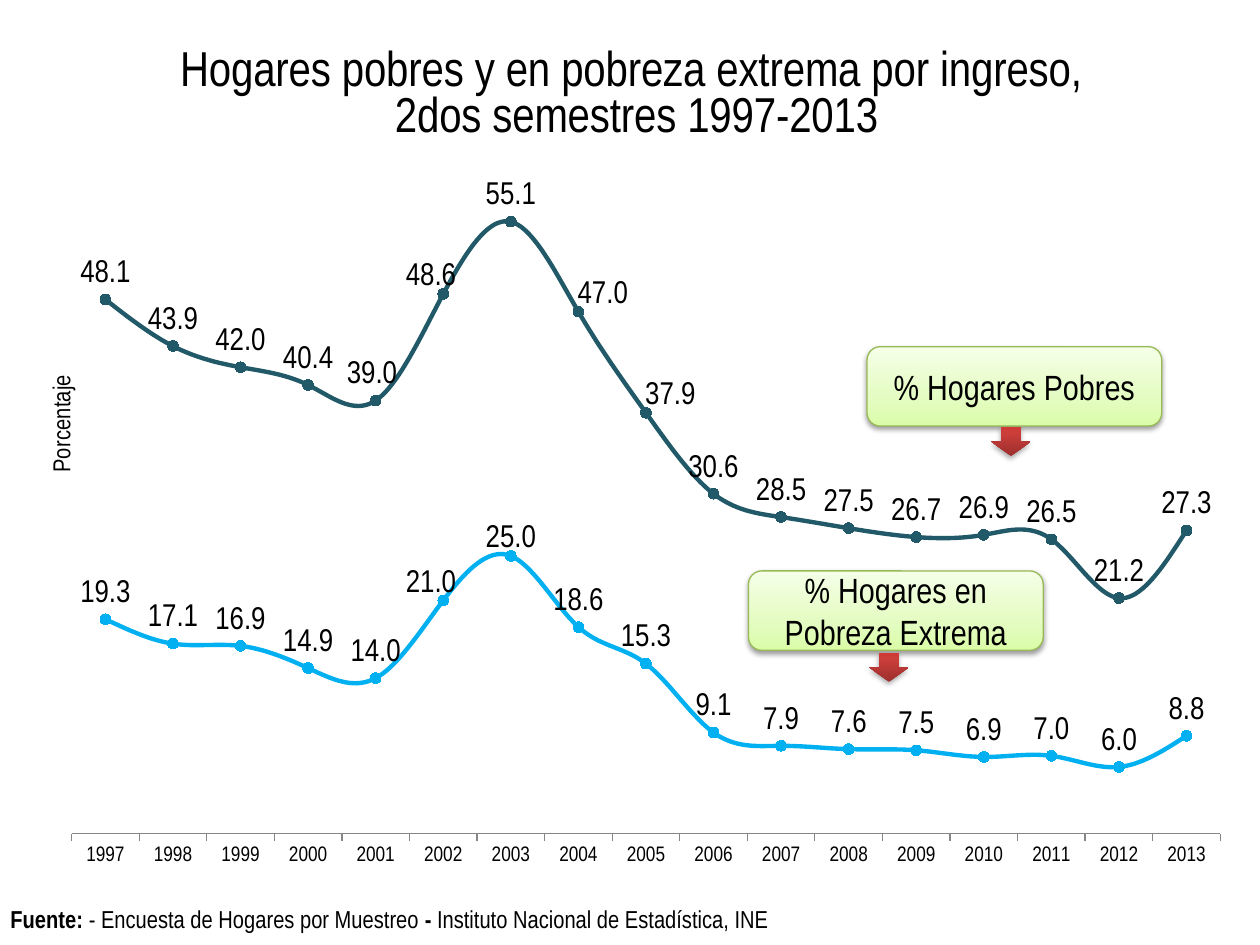
from lxml import etree
from pptx import Presentation
from pptx.chart.data import CategoryChartData
from pptx.dml.color import RGBColor
from pptx.enum.chart import XL_CHART_TYPE as ChartType, XL_LABEL_POSITION as LabelPos
from pptx.enum.chart import XL_MARKER_STYLE as MarkerStyle, XL_TICK_MARK as TickMark
from pptx.enum.shapes import MSO_SHAPE as Preset
from pptx.enum.text import MSO_ANCHOR as Anchor, PP_ALIGN as Align
from pptx.oxml import parse_xml
from pptx.oxml.ns import nsdecls, qn
from pptx.util import Cm, Pt

FONT = "Arial Narrow"
BLACK = "000000"
GREEN_STOPS = [(0, "DAFDA7"), (35, "E4FCC2"), (100, "F5FFE7")]
RED_STOPS = [(0, "9C2F2D"), (80, "CB3E3A"), (100, "CE3B37")]

YEARS = [str(year) for year in range(1997, 2014)]
POOR = [48.1, 43.9, 42.0, 40.4, 39.0, 48.6, 55.1, 47.0, 37.9,
        30.6, 28.5, 27.5, 26.7, 26.9, 26.5, 21.2, 27.3]
EXTREME = [19.3, 17.1, 16.9, 14.9, 14.0, 21.0, 25.0, 18.6, 15.3,
           9.1, 7.9, 7.6, 7.5, 6.9, 7.0, 6.0, 8.8]
# name, values, colour, label shifts by point as fractions of the chart
HOUSEHOLDS = [
    ("Hogares pobres", POOR, "215968",
     {4: (-0.003, 0), 5: (-0.01, 0.01), 7: (0.02, 0.01), 8: (0.02, 0.01)}),
    ("Pobreza extrema", EXTREME, "00B0F0", {5: (-0.01, 0.01), 6: (0, 0.01)}),
]


def rgb(value):
    return RGBColor.from_string(value)


def style_font(font, size, bold=False):
    font.name, font.size, font.bold = FONT, Pt(size), bold
    font.color.rgb = rgb(BLACK)


def add_run(paragraph, text, size, bold=False):
    run = paragraph.add_run()
    run.text = text
    style_font(run.font, size, bold)


def manual_layout(**values):
    """Return a c:layout; the keywords are its children in schema order."""
    layout = etree.Element(qn("c:layout"))
    manual = etree.SubElement(layout, qn("c:manualLayout"))
    for tag, value in values.items():
        etree.SubElement(manual, qn(f"c:{tag}")).set("val", str(value))
    return layout


def replace_layout(parent, layout, before):
    for old in parent.findall(qn("c:layout")):
        parent.remove(old)
    parent.find(qn(before)).addprevious(layout)


def style_series(series, color, label_shifts):
    series.smooth = True
    series.format.line.color.rgb = rgb(color)
    series.format.line.width = Pt(2.5)
    marker = series.marker
    marker.style, marker.size = MarkerStyle.CIRCLE, 6
    marker.format.fill.solid()
    marker.format.fill.fore_color.rgb = rgb(color)
    marker.format.line.color.rgb = rgb(color)

    labels = series.data_labels
    labels.show_value = True
    labels.number_format, labels.number_format_is_linked = "0.0", False
    labels.position = LabelPos.ABOVE
    style_font(labels.font, 18)
    for index, (dx, dy) in label_shifts.items():
        label = series.points[index].data_label
        style_font(label.font, 18)
        label.position = LabelPos.ABOVE
    for element in series.data_labels._element.findall(qn("c:dLbl")):
        dx, dy = label_shifts[int(element.find(qn("c:idx")).get("val"))]
        element.find(qn("c:idx")).addnext(manual_layout(x=dx, y=dy))


def style_axes(chart):
    years = chart.category_axis
    years.major_tick_mark = TickMark.OUTSIDE
    years.has_major_gridlines = False
    years.format.line.color.rgb = rgb("868686")
    style_font(years.tick_labels.font, 12)

    percent = chart.value_axis
    percent.visible = False
    percent.has_major_gridlines = False
    percent.minimum_scale, percent.maximum_scale = 0, 60
    percent.tick_labels.number_format = "0.0"
    percent.tick_labels.number_format_is_linked = False
    title = percent.axis_title
    add_run(title.text_frame.paragraphs[0], "Porcentaje", 14)
    body = title.text_frame._txBody.find(qn("a:bodyPr"))
    body.set("rot", "-5400000")
    body.set("vert", "horz")
    replace_layout(title._element, manual_layout(
        xMode="edge", yMode="edge", x=0.02, y=0.4), "c:overlay")


def add_poverty_chart(slide):
    data = CategoryChartData(number_format="0.0")
    data.categories = YEARS
    for name, values, _, _ in HOUSEHOLDS:
        data.add_series(name, values)
    chart = slide.shapes.add_chart(
        ChartType.LINE_MARKERS, Cm(0.41), Cm(0.41), Cm(24.61), Cm(17.65), data).chart
    chart.font.name, chart.font.size = "Calibri", Pt(10)
    chart.font.color.rgb = rgb(BLACK)
    chart.has_legend = False
    chart.has_title = True
    heading = chart.chart_title.text_frame
    add_run(heading.paragraphs[0], "Hogares pobres y en pobreza extrema por ingreso,", 28)
    add_run(heading.add_paragraph(), " 2dos semestres 1997-2013", 28)

    plot = chart.plots[0]
    plot.vary_by_categories = False
    for series, (_, _, color, shifts) in zip(plot.series, HOUSEHOLDS):
        style_series(series, color, shifts)
    style_axes(chart)
    plot_area = chart._chartSpace.find(".//" + qn("c:plotArea"))
    replace_layout(plot_area, manual_layout(
        layoutTarget="inner", xMode="edge", yMode="edge",
        x=0.042, y=0.168, w=0.941, h=0.761), "c:lineChart")


def add_glossy_shape(slide, preset, left, top, width, height, stops, shadow_alpha):
    """Add a shape with an upward gradient and a soft shadow below."""
    shape = slide.shapes.add_shape(preset, Cm(left), Cm(top), Cm(width), Cm(height))
    shape.fill.background()
    colors = "".join(
        f'<a:gs pos="{pos * 1000}"><a:srgbClr val="{color}"/></a:gs>' for pos, color in stops)
    properties = shape._element.spPr
    properties.replace(properties.find(qn("a:noFill")), parse_xml(
        f'<a:gradFill {nsdecls("a")} rotWithShape="0"><a:gsLst>{colors}</a:gsLst>'
        '<a:lin ang="16200000" scaled="0"/></a:gradFill>'))
    shape.line.fill.background()
    shape.shadow.inherit = False
    properties.find(qn("a:effectLst")).append(parse_xml(
        f'<a:outerShdw {nsdecls("a")} blurRad="{Pt(3.1)}" dist="{Pt(1.6)}" dir="5400000"'
        f' rotWithShape="0"><a:srgbClr val="{BLACK}"><a:alpha val="{shadow_alpha * 1000}"/>'
        '</a:srgbClr></a:outerShdw>'))
    return shape


def add_callout(slide, left, top, text):
    box = add_glossy_shape(
        slide, Preset.ROUNDED_RECTANGLE, left, top, 5.94, 1.6, GREEN_STOPS, 38)
    box.line.color.rgb = rgb("98B955")
    box.line.width = Pt(0.75)
    frame = box.text_frame
    frame.word_wrap = True
    frame.vertical_anchor = Anchor.MIDDLE
    frame.paragraphs[0].alignment = Align.CENTER
    add_run(frame.paragraphs[0], text, 20)


def add_down_arrow(slide, left, top):
    arrow = add_glossy_shape(
        slide, Preset.RIGHT_ARROW, left, top, 0.58, 0.79, RED_STOPS, 35)
    arrow.rotation = 90


def add_source_table(slide):
    table = slide.shapes.add_table(
        1, 1, Cm(0.18), Cm(18.31), Cm(15.42), Cm(0.53)).table
    table.first_row = table.horz_banding = False
    cell = table.cell(0, 0)
    cell.fill.background()
    cell.vertical_anchor = Anchor.MIDDLE
    cell.margin_left = cell.margin_right = cell.margin_top = Cm(0.03)
    cell.margin_bottom = 0
    paragraph = cell.text_frame.paragraphs[0]
    for text, bold in [("Fuente:", True), (" - Encuesta de Hogares por Muestreo ", False),
                       ("- ", True), ("Instituto Nacional de Estadística, INE", False)]:
        add_run(paragraph, text, 14, bold)


def main():
    deck = Presentation()
    deck.slide_width, deck.slide_height = Cm(25.4), Cm(19.05)
    slide = deck.slides.add_slide(deck.slide_layouts[6])
    add_poverty_chart(slide)
    add_source_table(slide)
    add_callout(slide, 17.48, 6.99, "% Hogares Pobres")
    add_callout(slide, 15.09, 11.51, "% Hogares en Pobreza Extrema")
    add_down_arrow(slide, 20.09, 8.51)
    add_down_arrow(slide, 17.63, 13.06)
    deck.save("out.pptx")


if __name__ == "__main__":
    main()
